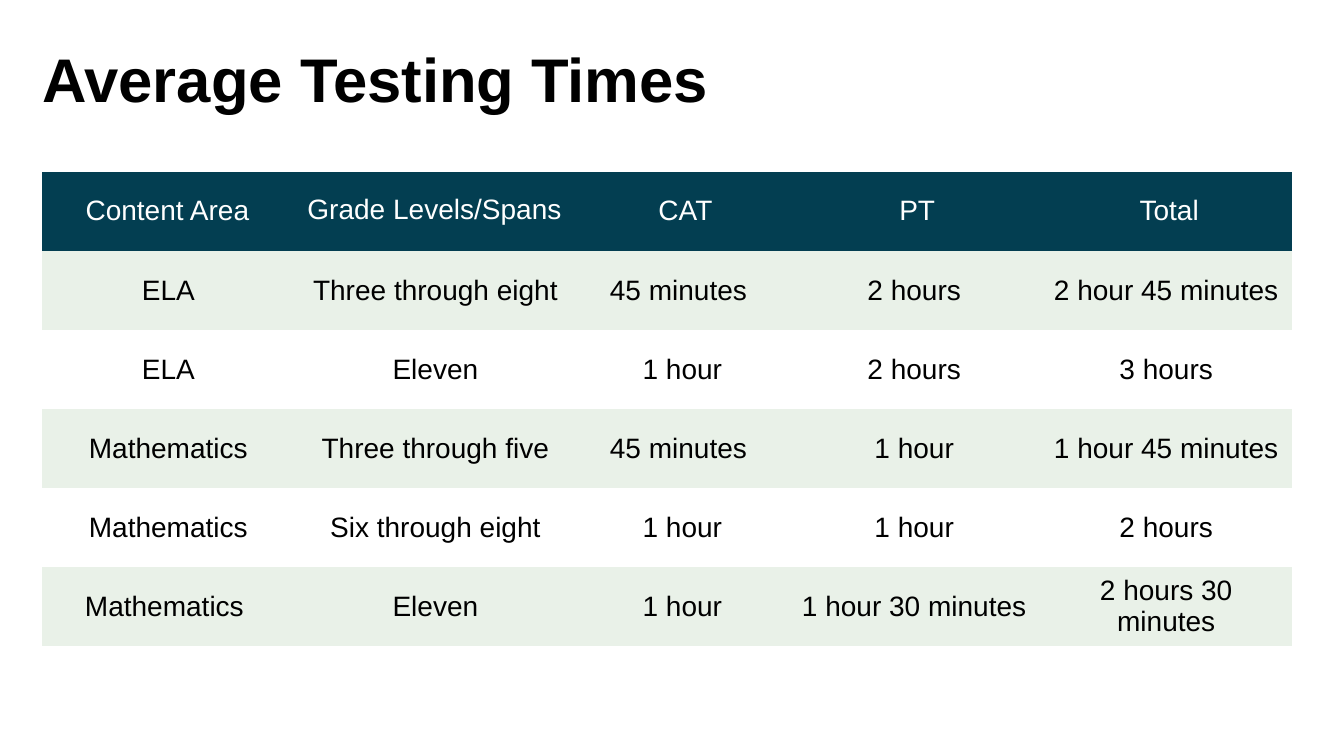
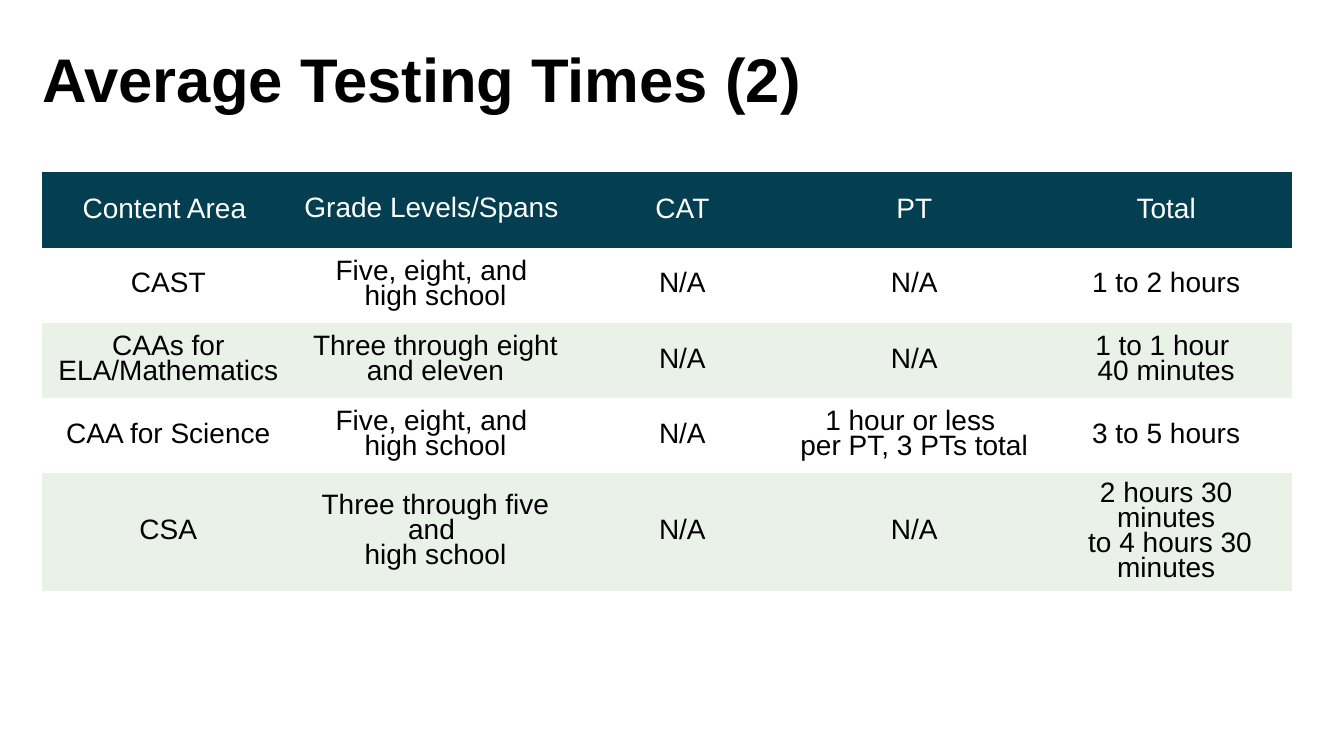
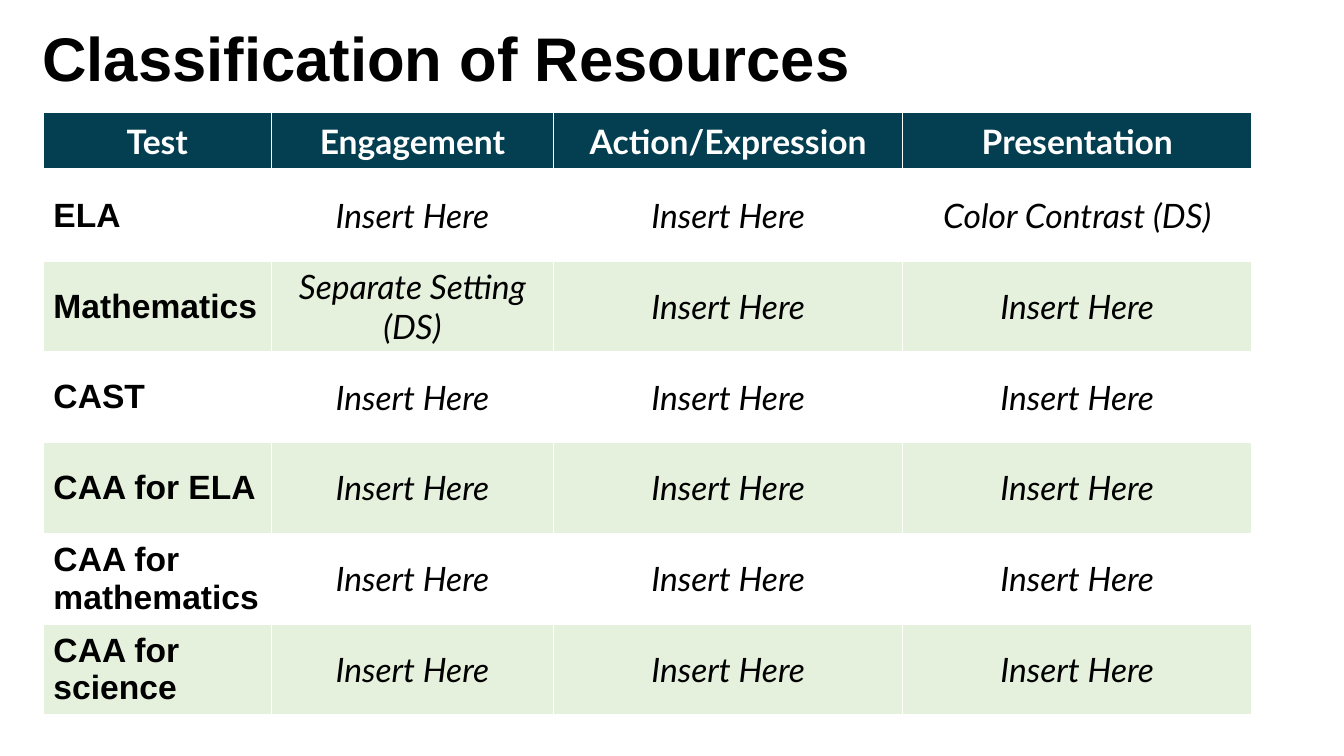
import pptx
import pptx.util
import pptx.dml.color
import pptx.enum.text
import pptx.oxml.ns
import lxml.etree

Pt = pptx.util.Pt
ALIGN = pptx.enum.text.PP_ALIGN
MIDDLE = pptx.enum.text.MSO_ANCHOR.MIDDLE
INK = {"black": "000000", "white": "FFFFFF", "teal": "033E51",
       "mint": "E9F1E8", "lime": "E5F1DC"}
PLAIN = "{2D5ABB26-0587-4C30-8999-92F81FD0307C}"
LEFT = 30.24

TIMES = ["Content Area ", "Grade Levels/Spans ", "CAT", "PT", "Total"]
WIDE = [180, 201.6, 151.2, 180, 180]
HERE = "Insert Here"
PAGES = [
    {"title": "Average Testing Times", "box": (900, 110.88),
     "at": (LEFT, 123.12), "cols": WIDE, "rows": [56.4] * 6,
     "band": "mint", "odd": 1, "space": 1, "pad": (5, 3, 0.72, 3),
     "cells": [
         TIMES,
         ["ELA", "Three through eight", "45 minutes ", "2 hours", "2 hour 45 minutes "],
         ["ELA", "Eleven", "1 hour", "2 hours", "3 hours"],
         ["Mathematics", "Three through five", "45 minutes ", "1 hour", "1 hour 45 minutes"],
         ["Mathematics", "Six through eight", "1 hour", "1 hour", "2 hours"],
         ["Mathematics ", "Eleven", "1 hour", "1 hour 30 minutes", "2 hours 30 minutes"],
     ]},
    {"title": "Average Testing Times (2)", "box": (900, 110.88),
     "at": (LEFT, 123.12), "cols": WIDE, "rows": [53.8] * 4 + [78.6],
     "band": "mint", "odd": 0, "space": 0.8, "pad": (7.2, 3.6, 7.2, 3.6),
     "cells": [
         TIMES,
         ["CAST", "Five, eight, and \vhigh school", "N/A", "N/A", "1 to 2 hours"],
         ["CAAs for ELA/Mathematics", "Three through eight and eleven", "N/A", "N/A",
          "1 to 1 hour \v40 minutes"],
         ["CAA for Science", "Five, eight, and \vhigh school", "N/A",
          "1 hour or less \vper PT, 3 PTs total", "3 to 5 hours"],
         ["CSA", "Three through five and \vhigh school", "N/A", "N/A",
          "2 hours 30 minutes\n to 4 hours 30 minutes"],
     ]},
    {"title": "Classification of Resources", "box": (864, 80.64),
     "at": (31, 80.64), "cols": [162.8, 201.6, 249.4, 249.4], "rows": [41] + [64.8] * 6,
     "band": "lime", "odd": 0, "space": 1, "pad": (7.2, 3.6, 7.2, 3.6), "grid": True,
     "cells": [
         ["Test", "Engagement", "Action/Expression", "Presentation"],
         ["ELA", HERE, HERE, "Color Contrast (DS)"],
         ["Mathematics", "Separate Setting (DS)", HERE, HERE],
         ["CAST", HERE, HERE, HERE],
         ["CAA for ELA", HERE, HERE, HERE],
         ["CAA for mathematics", HERE, HERE, HERE],
         ["CAA for science", HERE, HERE, HERE],
     ]},
]


def write(frame, text, size, ink, face="Arial", bold=False, slant=False,
          align=ALIGN.CENTER, space=1):
    """Fill a frame: a newline starts a paragraph, a vertical tab breaks a line."""
    for p, part in enumerate(text.split("\n")):
        para = frame.add_paragraph() if p else frame.paragraphs[0]
        para.alignment = align
        para.line_spacing = space
        for n, line in enumerate(part.split("\v")):
            if n:
                para.add_line_break()
            run = para.add_run()
            run.text = line
            font = run.font
            font.size, font.name, font.bold, font.italic = Pt(size), face, bold, slant
            font.color.rgb = pptx.dml.color.RGBColor.from_string(INK[ink])


def edge(cell, side, width):
    """Draw one white border; call before the cell is filled."""
    qn = pptx.oxml.ns.qn
    line = lxml.etree.SubElement(cell._tc.get_or_add_tcPr(), qn("a:ln" + side),
                                 w=str(int(Pt(width))))
    fill = lxml.etree.SubElement(line, qn("a:solidFill"))
    lxml.etree.SubElement(fill, qn("a:srgbClr"), val=INK["white"])


deck = pptx.Presentation()
deck.slide_width, deck.slide_height = Pt(960), Pt(540)

for page in PAGES:
    slide = deck.slides.add_slide(deck.slide_layouts[6])
    wide, high = page["box"]
    frame = slide.shapes.add_textbox(Pt(LEFT), 0, Pt(wide), Pt(high)).text_frame
    frame.word_wrap = True
    frame.vertical_anchor = MIDDLE
    frame.margin_left = frame.margin_right = 0
    write(frame, page["title"], 44, "black", bold=True, align=ALIGN.LEFT)

    cols, rows, grid = page["cols"], page["rows"], page.get("grid")
    x, y = page["at"]
    table = slide.shapes.add_table(len(rows), len(cols), Pt(x), Pt(y),
                                   Pt(sum(cols)), Pt(sum(rows))).table
    table._tbl.tblPr[0].text = PLAIN
    table.horz_banding = False
    for col, width in zip(table.columns, cols):
        col.width = Pt(width)
    for row, height in zip(table.rows, rows):
        row.height = Pt(height)

    for r, words in enumerate(page["cells"]):
        head = r == 0
        fill = "teal" if head else page["band"] if r % 2 == page["odd"] else "white"
        ink = "white" if head else "black"
        pad = page["pad"] if head else (7.2, 3.6, 7.2, 3.6)
        for c, text in enumerate(words):
            cell = table.cell(r, c)
            cell.vertical_anchor = MIDDLE
            (cell.margin_left, cell.margin_top,
             cell.margin_right, cell.margin_bottom) = map(Pt, pad)
            if grid:
                for side, width in (("L", 1), ("R", 1), ("T", 3 if r == 1 else 1),
                                    ("B", 3 if head else 1)):
                    edge(cell, side, width)
            cell.fill.solid()
            cell.fill.fore_color.rgb = pptx.dml.color.RGBColor.from_string(INK[fill])
            if grid:
                label = c == 0 and not head
                write(cell.text_frame, text, 24, ink, "Arial" if label else "Lato",
                      bold=head or label, slant=not (head or label),
                      align=ALIGN.LEFT if label else ALIGN.CENTER)
            else:
                space = (0.85 if c == 1 else 0.9) if head else page["space"]
                write(cell.text_frame, text, 20, ink, space=space)

deck.save("out.pptx")
